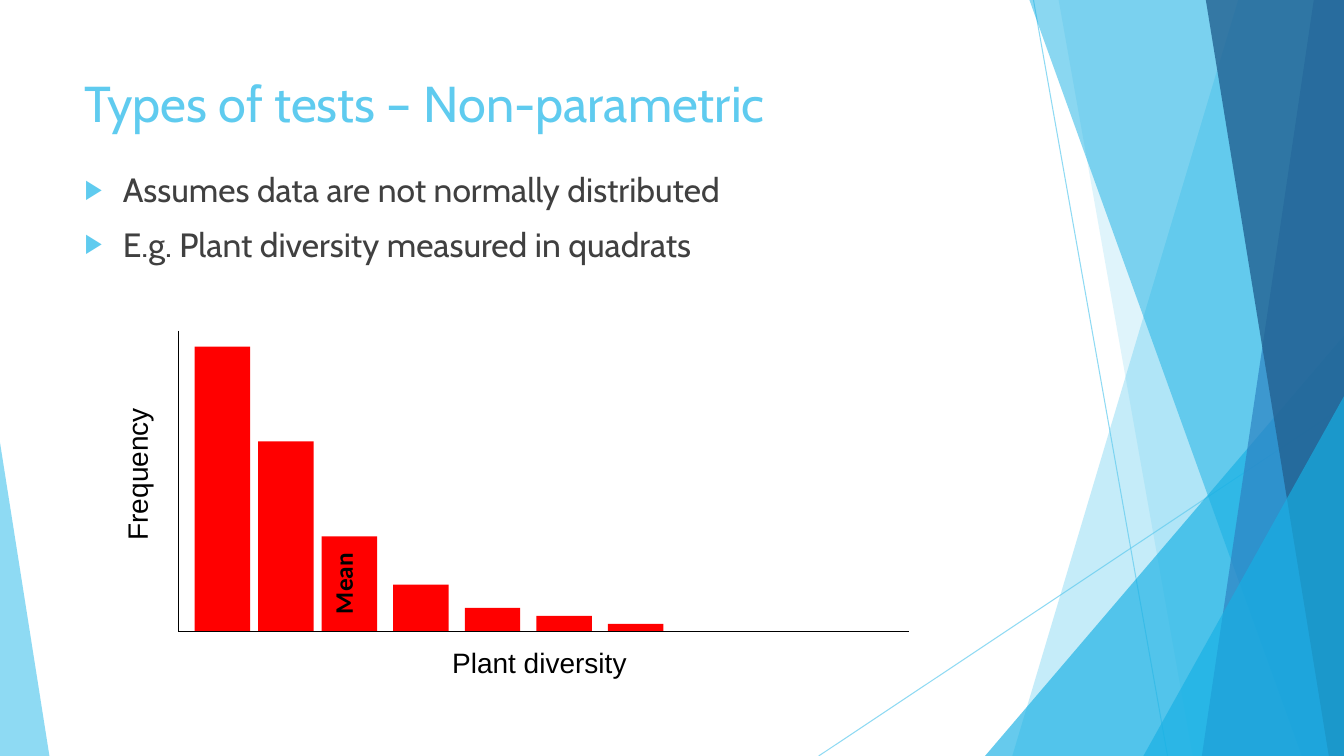
from dataclasses import dataclass

from pptx import Presentation
from pptx.dml.color import RGBColor
from pptx.enum import shapes, text
from pptx.oxml import ns, xmlchemy
from pptx.util import Inches, Pt


@dataclass(frozen=True)
class Theme:
    """Colours, fonts and type sizes of the slide."""
    sky: str = "5FCBEF"
    cyan: str = "17B0E4"
    blue: str = "2E83C3"
    navy: str = "236292"
    red: str = "FF0000"
    black: str = "000000"
    grey: str = "404040"
    heading_font: str = "Cabin"
    axis_font: str = "Arial"
    mean_font: str = "Calibri"
    title_size: int = 36
    body_size: int = 24
    axis_size: int = 20
    mean_size: int = 18


THEME = Theme()
WIDTH, HEIGHT = 13.33, 7.5
BASELINE, AXIS_LEFT, AXIS_RIGHT, AXIS_TOP = 6.27, 1.77, 9.02, 3.28
BAR_WIDTH = 0.55
BAR_LEFTS = [1.93 + 0.63 * i for i in range(3)] + [3.9 + 0.71 * i for i in range(4)]
BAR_HEIGHTS = [2.83, 1.89, 0.95, 0.47, 0.24, 0.16, 0.08]
BULLETS = ["Assumes data are not normally distributed",
           "E.g. Plant diversity measured in quadrats"]
FACETS = [
    ([(12.28, 0), (WIDTH, 0), (WIDTH, HEIGHT), (10.04, HEIGHT)], THEME.sky, 36),
    ([(10.5, 0), (WIDTH, 0), (WIDTH, HEIGHT), (11.83, HEIGHT)], THEME.sky, 20),
    ([(9.77, HEIGHT), (WIDTH, 3.33), (WIDTH, HEIGHT)], THEME.cyan, 66),
    ([(10.21, 0), (WIDTH, 0), (WIDTH, HEIGHT), (12.91, HEIGHT)], THEME.cyan, 50),
    ([(13.03, 0), (WIDTH, 0), (WIDTH, HEIGHT), (11.92, HEIGHT)], THEME.blue, 70),
    ([(11.96, 0), (WIDTH, 0), (WIDTH, HEIGHT), (13.18, HEIGHT)], THEME.navy, 80),
    ([(11.34, HEIGHT), (WIDTH, 3.93), (WIDTH, HEIGHT)], THEME.cyan, 66),
    ([(0, HEIGHT), (0, 4.39), (0.49, HEIGHT)], THEME.sky, 70),
]


def add_child(parent, tag, **attributes):
    """Append a DrawingML element with the given attributes."""
    child = xmlchemy.OxmlElement(tag)
    for name, value in attributes.items():
        child.set(name, str(value))
    parent.append(child)
    return child


def set_alpha(shape, percent):
    """Make the colours of a shape or line partly transparent."""
    for colour in shape._element.spPr.iter(ns.qn("a:srgbClr")):
        add_child(colour, "a:alpha", val=percent * 1000)


def paint(shape, colour):
    """Give a shape a flat fill without line or shadow."""
    shape.shadow.inherit = False
    shape.fill.solid()
    shape.fill.fore_color.rgb = RGBColor.from_string(colour)
    shape.line.fill.background()


def add_facet(slide, points, colour, opacity):
    """Draw one translucent polygon of the background."""
    corners = [(Inches(x), Inches(y)) for x, y in points]
    builder = slide.shapes.build_freeform(*corners[0])
    builder.add_line_segments(corners[1:], close=True)
    facet = builder.convert_to_shape()
    paint(facet, colour)
    set_alpha(facet, opacity)


def add_line(slide, start, end, colour, opacity=100):
    """Draw a thin straight line between two points."""
    ends = [Inches(value) for value in (*start, *end)]
    line = slide.shapes.add_connector(shapes.MSO_CONNECTOR.STRAIGHT, *ends)
    line.line.color.rgb = RGBColor.from_string(colour)
    line.line.width = Pt(0.75)
    if opacity < 100:
        set_alpha(line, opacity)
    add_child(line._element.spPr, "a:effectLst")


def add_bar(slide, left, height):
    """Draw one bar of the histogram, standing on the baseline."""
    bar = slide.shapes.add_shape(
        shapes.MSO_SHAPE.RECTANGLE, Inches(left), Inches(BASELINE - height),
        Inches(BAR_WIDTH), Inches(height))
    paint(bar, THEME.red)


def style_text(text_frame, font, size, colour, align, bold=False):
    """Format every run of a text frame."""
    text_frame.word_wrap = True
    text_frame.vertical_anchor = text.MSO_ANCHOR.TOP
    for paragraph in text_frame.paragraphs:
        paragraph.alignment = align
        for run in paragraph.runs:
            run.font.name = font
            run.font.size = Pt(size)
            run.font.bold = bold
            run.font.color.rgb = RGBColor.from_string(colour)


def add_text(slide, box, content):
    """Add a text box holding the given wording."""
    shape = slide.shapes.add_textbox(*[Inches(value) for value in box])
    shape.text_frame.text = content
    return shape


def add_label(slide, box, content, font, size, bold=False):
    """Add a centred black label to the histogram."""
    label = add_text(slide, box, content)
    style_text(label.text_frame, font, size, THEME.black, text.PP_ALIGN.CENTER, bold)
    return label


def set_title(slide, content):
    """Place and format the title placeholder."""
    title = slide.shapes.title
    title.left, title.top = Inches(0.74), Inches(0.67)
    title.width, title.height = Inches(9.4), Inches(1.44)
    title.text_frame.text = content
    style_text(title.text_frame, THEME.heading_font, THEME.title_size,
               THEME.sky, text.PP_ALIGN.LEFT)


def add_bullets(slide, lines):
    """Add the list with triangular bullets."""
    frame = add_text(slide, (0.74, 1.63, 9.4, 4.24), "\n".join(lines)).text_frame
    style_text(frame, THEME.heading_font, THEME.body_size, THEME.grey, text.PP_ALIGN.LEFT)
    for paragraph in frame.paragraphs:
        paragraph.space_before = Pt(10)
        properties = paragraph._p.get_or_add_pPr()
        properties.set("marL", str(Inches(0.38)))
        properties.set("indent", str(Inches(-0.38)))
        add_child(add_child(properties, "a:buClr"), "a:srgbClr", val=THEME.sky)
        add_child(properties, "a:buSzPct", val=80000)
        add_child(properties, "a:buFont", typeface=THEME.axis_font)
        add_child(properties, "a:buChar", char="▶")


def add_background(slide):
    """Draw the crossing lines and facets."""
    add_line(slide, (10.25, 0), (11.58, HEIGHT), THEME.sky, 70)
    add_line(slide, (WIDTH, 4.03), (8.12, HEIGHT), THEME.sky, 70)
    for points, colour, opacity in FACETS:
        add_facet(slide, points, colour, opacity)


def add_histogram(slide):
    """Draw the bars, axes and labels."""
    for left, height in zip(BAR_LEFTS, BAR_HEIGHTS):
        add_bar(slide, left, height)
    add_line(slide, (AXIS_LEFT, AXIS_TOP), (AXIS_LEFT, BASELINE), THEME.black)
    add_line(slide, (AXIS_LEFT, BASELINE), (AXIS_RIGHT, BASELINE), THEME.black)
    add_label(slide, (1.69, 6.35, 7.32, 0.43), "Plant diversity",
              THEME.axis_font, THEME.axis_size)
    frequency = add_label(slide, (-0.07, 4.49, 2.85, 0.43), "Frequency",
                          THEME.axis_font, THEME.axis_size)
    frequency.rotation = 270
    mean = add_label(slide, (3.2, 5.35, 0.5, 0.88), "Mean",
                     THEME.mean_font, THEME.mean_size, bold=True)
    mean.text_frame._txBody.bodyPr.set("vert", "vert270")


def main():
    """Build and save the slide."""
    presentation = Presentation()
    presentation.slide_width, presentation.slide_height = Inches(WIDTH), Inches(HEIGHT)
    slide = presentation.slides.add_slide(presentation.slide_layouts[5])
    add_background(slide)
    set_title(slide, "Types of tests – Non-parametric")
    add_bullets(slide, BULLETS)
    add_histogram(slide)
    presentation.save("out.pptx")


if __name__ == "__main__":
    main()
